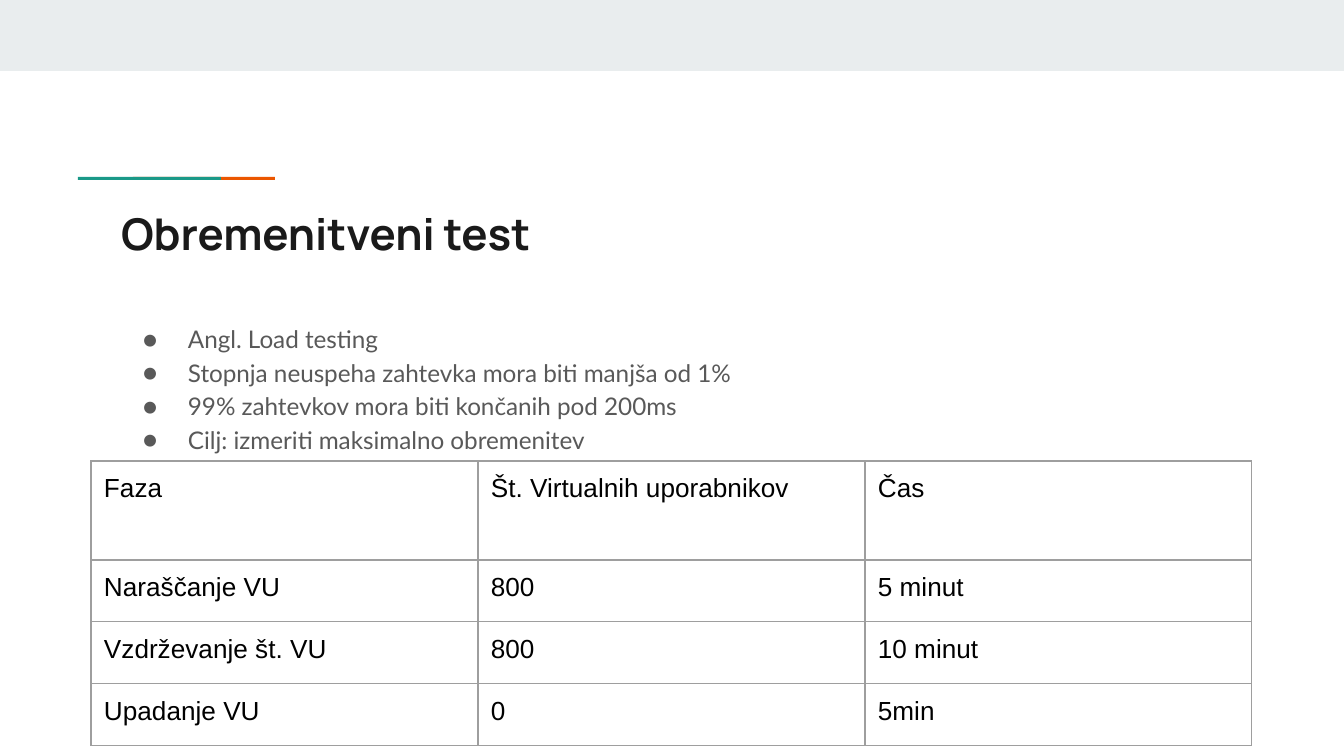
from lxml.etree import SubElement
from pptx import Presentation
from pptx.dml.color import RGBColor
from pptx.enum.shapes import MSO_SHAPE as Shape
from pptx.enum.text import MSO_ANCHOR as Anchor, MSO_AUTO_SIZE as AutoSize, PP_ALIGN as Align
from pptx.oxml.ns import qn
from pptx.util import Pt

PX = 914400 / 134.4
INSET = 13
GREY = "595959"
BULLETS = [
    "Angl. Load testing",
    "Stopnja neuspeha zahtevka mora biti manjša od 1%",
    "99% zahtevkov mora biti končanih pod 200ms",
    "Cilj: izmeriti maksimalno obremenitev",
]
PHASES = [
    ("Faza", "Št. Virtualnih uporabnikov", "Čas"),
    ("Naraščanje VU", "800", "5 minut"),
    ("Vzdrževanje št. VU", "800", "10 minut"),
    ("Upadanje VU", "0", "5min"),
]
COLUMN_WIDTH = 387
ROW_HEIGHTS = [99, 62, 62, 62]


def px(length):
    return round(length * PX)


def color(value):
    return RGBColor.from_string(value)


def set_margins(target):
    target.margin_left = target.margin_right = px(INSET)
    target.margin_top = target.margin_bottom = px(INSET)


def write(paragraph, text, size, font, fill, bold=False, spacing=1.0):
    paragraph.alignment = Align.LEFT
    paragraph.line_spacing = spacing
    run = paragraph.add_run()
    run.text = text
    run.font.size = Pt(size)
    run.font.name = font
    run.font.bold = bold
    run.font.color.rgb = color(fill)


def add_bar(slide, left, top, width, height, fill):
    bar = slide.shapes.add_shape(Shape.RECTANGLE, px(left), px(top), px(width), px(height))
    bar.shadow.inherit = False
    bar.fill.solid()
    bar.fill.fore_color.rgb = color(fill)
    bar.line.fill.background()


def prepare_frame(frame):
    set_margins(frame)
    frame.word_wrap = True
    frame.auto_size = AutoSize.NONE
    frame.vertical_anchor = Anchor.TOP


def set_title(slide, text):
    title = slide.shapes.title
    title.left, title.top, title.width, title.height = map(px, (108, 194, 1130, 79))
    prepare_frame(title.text_frame)
    write(title.text_frame.paragraphs[0], text, 23.4, "Manrope", "1A1A1A", bold=True)


def set_bullet(paragraph, fill):
    properties = paragraph._p.get_or_add_pPr()
    properties.set("marL", str(px(67)))
    properties.set("indent", str(px(-45)))
    bullet_color = SubElement(properties, qn("a:buClr"))
    SubElement(bullet_color, qn("a:srgbClr"), val=fill)
    SubElement(properties, qn("a:buFont"), typeface="Lato")
    SubElement(properties, qn("a:buChar"), char="●")


def add_bullets(slide, lines):
    frame = slide.shapes.add_textbox(px(108), px(307), px(1130), px(332)).text_frame
    prepare_frame(frame)
    for index, line in enumerate(lines):
        paragraph = frame.add_paragraph() if index else frame.paragraphs[0]
        write(paragraph, line, 13, "Lato", GREY, spacing=1.15)
        set_bullet(paragraph, GREY)


def set_borders(cell, fill, width):
    properties = cell._tc.get_or_add_tcPr()
    for position, side in enumerate(("a:lnL", "a:lnR", "a:lnT", "a:lnB")):
        line = properties.makeelement(qn(side), {"w": str(Pt(width))})
        properties.insert(position, line)
        solid = SubElement(line, qn("a:solidFill"))
        SubElement(solid, qn("a:srgbClr"), val=fill)


def add_phase_table(slide, rows):
    columns = len(rows[0])
    table = slide.shapes.add_table(
        len(rows), columns, px(91), px(461), px(columns * COLUMN_WIDTH), px(sum(ROW_HEIGHTS))
    ).table
    table.first_row = table.horz_banding = False
    for column in table.columns:
        column.width = px(COLUMN_WIDTH)
    for row, height, texts in zip(table.rows, ROW_HEIGHTS, rows):
        row.height = px(height)
        for cell, text in zip(row.cells, texts):
            set_margins(cell)
            cell.vertical_anchor = Anchor.TOP
            cell.fill.background()
            write(cell.text_frame.paragraphs[0], text, 14, "Arial", "000000")
            set_borders(cell, "9E9E9E", 0.75)


def main():
    presentation = Presentation()
    presentation.slide_width, presentation.slide_height = px(1344), px(756)
    slide = presentation.slides.add_slide(presentation.slide_layouts[5])
    add_bar(slide, 0, 0, 1344, 71, "E9EDEE")
    add_bar(slide, 133, 177, 142, 3, "EB5600")
    add_bar(slide, 78, 177, 143, 3, "1A9988")
    set_title(slide, "Obremenitveni test")
    add_bullets(slide, BULLETS)
    add_phase_table(slide, PHASES)
    presentation.save("out.pptx")


if __name__ == "__main__":
    main()
